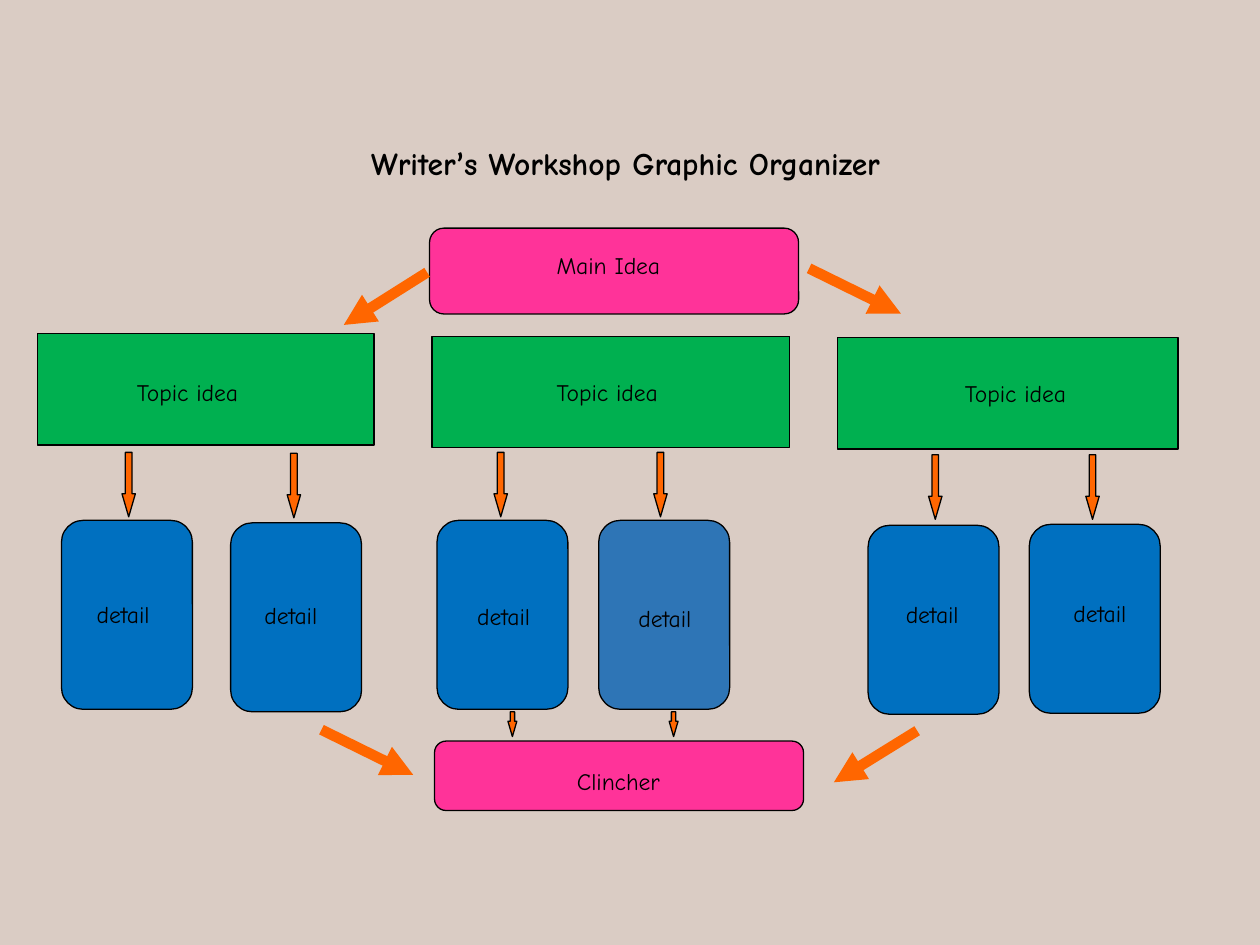
from lxml import etree
from pptx import Presentation
from pptx import util as u
from pptx.dml.color import RGBColor
from pptx.enum import shapes, text
from pptx.oxml.ns import qn

Cm = u.Cm
colour = RGBColor.from_string
PINK, GREEN, BLUE, SOFT_BLUE = "FF3399", "00B050", "0070C0", "2E75B6"
ORANGE, BLACK, BEIGE = "FF6600", "000000", "DACCC4"
FONT = "Comic Neue"

deck = Presentation()
deck.slide_width, deck.slide_height = Cm(25.4), Cm(19.05)
page = deck.slides.add_slide(deck.slide_layouts[5])
page.background.fill.solid()
page.background.fill.fore_color.rgb = colour(BEIGE)


def outlined_shape(kind, left, top, width, height, fill):
    box = page.shapes.add_shape(kind, Cm(left), Cm(top), Cm(width), Cm(height))
    box.shadow.inherit = False
    box.fill.solid()
    box.fill.fore_color.rgb = colour(fill)
    box.line.color.rgb = colour(BLACK)
    box.line.width = u.Pt(0.75)
    return box


def label(words, left, top, width):
    box = page.shapes.add_textbox(Cm(left), Cm(top), Cm(width), Cm(0.84))
    box.text_frame.word_wrap = False
    box.text_frame.text = words
    span = box.text_frame.paragraphs[0].runs[0]
    span.font.name, span.font.size = FONT, u.Pt(13.5)
    span.font.color.rgb = colour(BLACK)


# Title
title = page.shapes.title
title.left, title.top, title.width, title.height = Cm(6.45), Cm(2.77), Cm(12.32), Cm(1.02)
frame = title.text_frame
frame.word_wrap = False
frame.auto_size = text.MSO_AUTO_SIZE.NONE
frame.vertical_anchor = text.MSO_ANCHOR.MIDDLE
para = frame.paragraphs[0]
para.alignment = text.PP_ALIGN.CENTER
for words, font in (("Writer", FONT), ("’", "Calibri"), ("s Workshop Graphic Organizer", FONT)):
    span = para.add_run()
    span.text = words
    span.font.name, span.font.size, span.font.bold = font, u.Pt(18), True
    span.font.color.rgb = colour(BLACK)

# Main idea and clincher: box left, top, height, then label left, top, width
ROUNDED = shapes.MSO_SHAPE.ROUNDED_RECTANGLE
for words, left, top, height, label_left, label_top, label_width in (
    ("Main Idea", 8.66, 4.6, 1.73, 10.97, 4.93, 2.77),
    ("Clincher", 8.76, 14.94, 1.4, 11.38, 15.34, 2.34),
):
    outlined_shape(ROUNDED, left, top, 7.44, height, PINK)
    label(words, label_left, label_top, label_width)

# Topics: box left, top, width, then label left, top
for left, top, width, label_left, label_top in (
    (0.76, 6.73, 6.78, 2.51, 7.49),
    (8.71, 6.78, 7.21, 10.97, 7.49),
    (16.89, 6.81, 6.86, 19.2, 7.52),
):
    outlined_shape(shapes.MSO_SHAPE.FLOWCHART_PROCESS, left, top, width, 2.24, GREEN)
    label("Topic idea", label_left, label_top, 2.9)

# Details: box left, top, fill, then label left, top
for left, top, fill, label_left, label_top in (
    (1.24, 10.49, BLUE, 1.7, 11.96),
    (4.65, 10.54, BLUE, 5.08, 11.99),
    (8.81, 10.49, BLUE, 9.37, 12.01),
    (12.07, 10.49, SOFT_BLUE, 12.62, 12.04),
    (17.5, 10.59, BLUE, 18.01, 11.96),
    (20.75, 10.57, BLUE, 21.39, 11.94),
):
    outlined_shape(ROUNDED, left, top, 2.64, 3.81, fill)
    label("detail", label_left, label_top, 1.85)

# Down arrows: topics to details, then middle details to clincher
long_arrows = [(left, top, 0.27, 1.3) for left, top in (
    (2.46, 9.12), (5.79, 9.14), (9.96, 9.12), (13.18, 9.12), (18.72, 9.17), (21.89, 9.17))]
short_arrows = [(left, 14.35, 0.18, 0.5) for left in (10.24, 13.49)]
for place in long_arrows + short_arrows:
    arrow = outlined_shape(shapes.MSO_SHAPE.DOWN_ARROW, *place, ORANGE)
    arrow.adjustments[0], arrow.adjustments[1] = 0.5, 1.72

# Slanted arrows
for ends in (
    (16.31, 5.41, 18.16, 6.32),
    (8.61, 5.49, 6.93, 6.55),
    (6.48, 14.71, 8.33, 15.62),
    (18.49, 14.73, 16.81, 15.77),
):
    arrow = page.shapes.add_connector(shapes.MSO_CONNECTOR.STRAIGHT, *map(Cm, ends))
    arrow.line.color.rgb = colour(ORANGE)
    arrow.line.width = u.Pt(6)
    etree.SubElement(arrow.line._get_or_add_ln(), qn("a:tailEnd"), type="triangle")
    etree.SubElement(arrow._element.spPr, qn("a:effectLst"))

deck.save("out.pptx")
